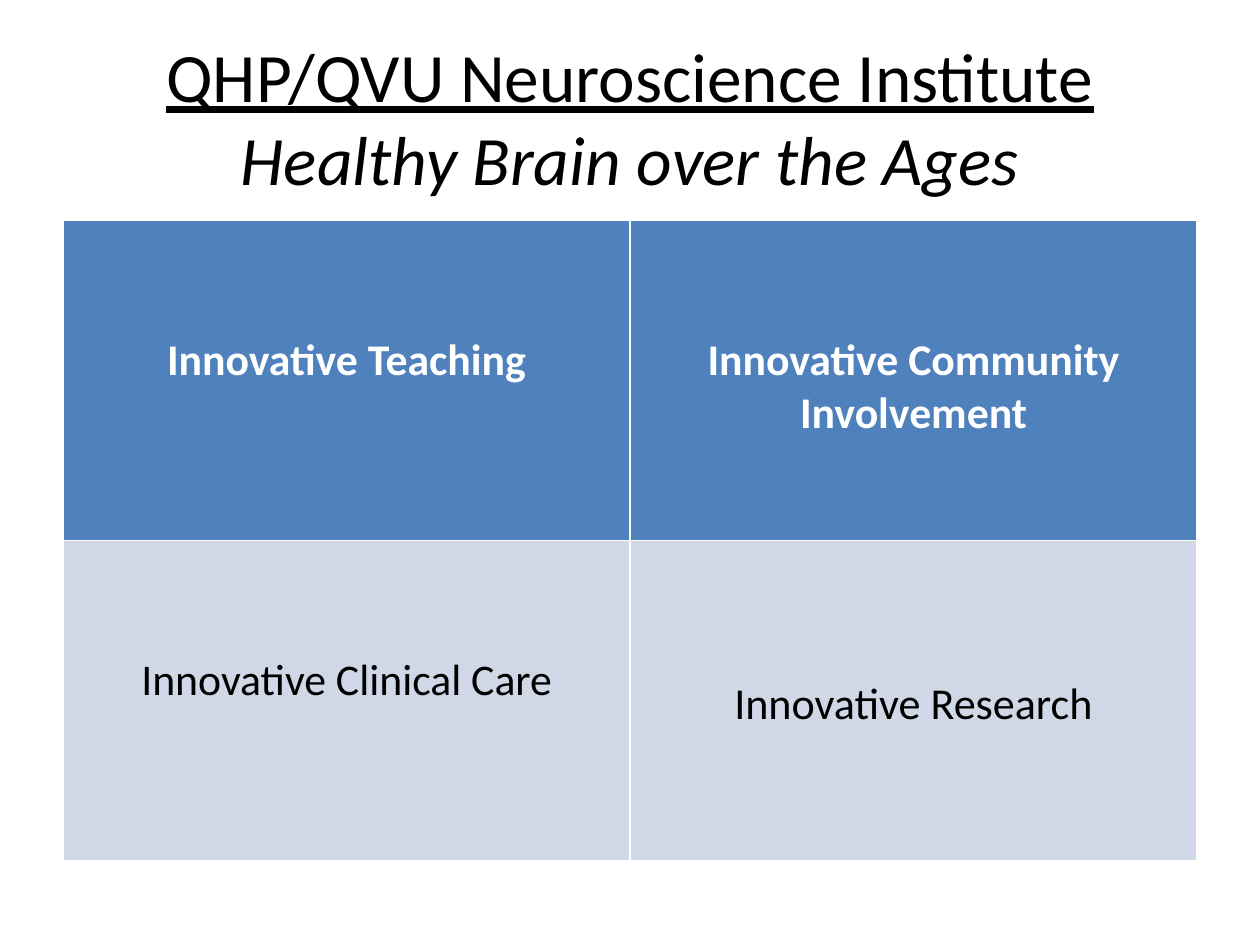
from pptx import Presentation
from pptx.dml.color import RGBColor as RGB
from pptx.enum.text import MSO_ANCHOR as Anchor, PP_ALIGN as Align
from pptx.util import Cm, Pt

COLORS = {"blue": "4F81BD", "pale": "D0D8E8", "white": "FFFFFF", "black": "000000"}
FONT = "Calibri"
TITLE = ("QHP/QVU Neuroscience Institute", "Healthy Brain over the Ages")
ROWS = [
    {"fill": "blue", "color": "white", "bold": True,
     "cells": [("Innovative Teaching", 25, 2.28),
               ("Innovative Community Involvement", 25, 2.28)]},
    {"fill": "pale", "color": "black", "bold": False,
     "cells": [("Innovative Clinical Care", 25, 2.28),
               ("Innovative Research", 25.2, 2.76)]},
]
LEFT, WIDTH = Cm(1.27), Cm(22.86)


def format_paragraph(p, size, color, bold=False):
    """Centre a paragraph and set its font."""
    p.alignment = Align.CENTER
    p.font.name = FONT
    p.font.size = Pt(size)
    p.font.bold = bold
    p.font.color.rgb = RGB.from_string(COLORS[color])


def add_title(s):
    """Fill the title with an underlined line and an italic line."""
    sp = s.shapes.title
    sp.left, sp.top, sp.width, sp.height = LEFT, Cm(0.76), WIDTH, Cm(3.18)
    tf = sp.text_frame
    tf.vertical_anchor = Anchor.MIDDLE
    p = tf.paragraphs[0]
    format_paragraph(p, 39.6, "black")
    name = p.add_run()
    name.text = TITLE[0]
    name.font.underline = True
    p.add_line_break()
    motto = p.add_run()
    motto.text = TITLE[1]
    motto.font.italic = True
    for r in p.runs:
        r.font.size = Pt(39.6)


def add_focus_table(s):
    """Add the two-by-two table of focus areas."""
    columns = len(ROWS[0]["cells"])
    table = s.shapes.add_table(len(ROWS), columns, LEFT, Cm(4.45), WIDTH, Cm(12.9)).table
    for i, row in enumerate(ROWS):
        for j, (text, size, margin) in enumerate(row["cells"]):
            cell = table.cell(i, j)
            cell.fill.solid()
            cell.fill.fore_color.rgb = RGB.from_string(COLORS[row["fill"]])
            cell.margin_top = Cm(margin)
            cell.text = text
            format_paragraph(cell.text_frame.paragraphs[0], size, row["color"], row["bold"])


def main():
    """Build and save the slide."""
    prs = Presentation()
    prs.slide_width, prs.slide_height = Cm(25.4), Cm(19.05)
    s = prs.slides.add_slide(prs.slide_layouts[5])
    add_title(s)
    add_focus_table(s)
    prs.save("out.pptx")


if __name__ == "__main__":
    main()
